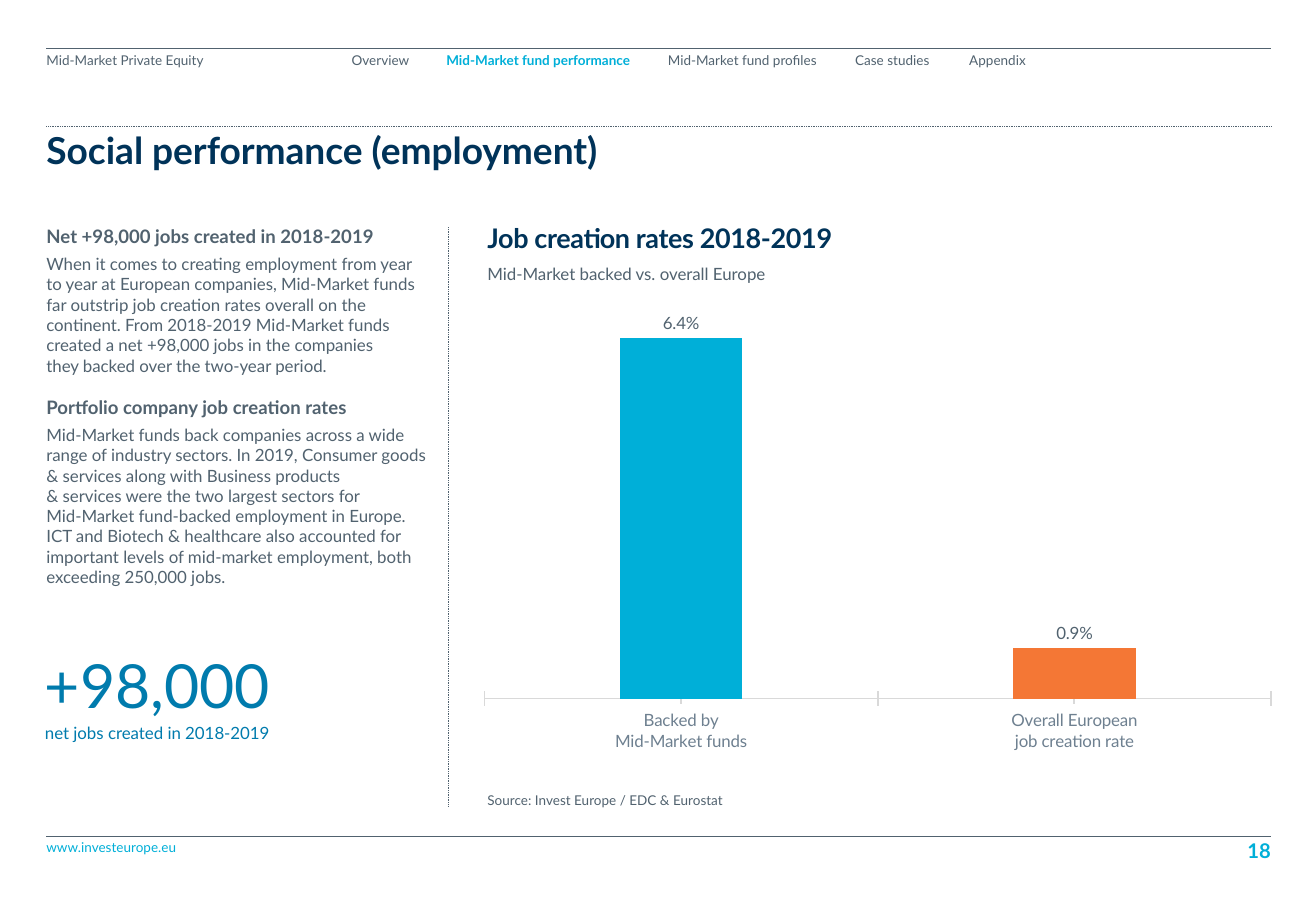
from dataclasses import dataclass

from lxml.etree import SubElement
from pptx import Presentation
from pptx.chart.data import CategoryChartData
from pptx.dml.color import RGBColor
from pptx.enum.chart import XL_CHART_TYPE as ChartType
from pptx.enum.chart import XL_LABEL_POSITION as LabelPosition
from pptx.enum.chart import XL_TICK_LABEL_POSITION as TickLabels
from pptx.enum.chart import XL_TICK_MARK as Tick
from pptx.enum.dml import MSO_LINE_DASH_STYLE as Dash
from pptx.enum.shapes import MSO_CONNECTOR as Connector
from pptx.enum.text import MSO_ANCHOR as Anchor
from pptx.enum.text import MSO_AUTO_SIZE as AutoSize
from pptx.enum.text import PP_ALIGN as Align
from pptx.oxml.ns import qn
from pptx.util import Cm, Pt


@dataclass(frozen=True)
class Theme:
    """Colours, type sizes and margins of the slide."""
    font: str = "Lato"
    slate: RGBColor = RGBColor.from_string("51626F")
    slate_light: RGBColor = RGBColor.from_string("6E8090")
    navy: RGBColor = RGBColor.from_string("003359")
    blue: RGBColor = RGBColor.from_string("007BAD")
    cyan: RGBColor = RGBColor.from_string("00AFD8")
    orange: RGBColor = RGBColor.from_string("F47735")
    axis_grey: RGBColor = RGBColor.from_string("D9D9D9")
    small: int = 8
    body: int = 10
    heading: int = 11
    page: int = 12
    chart_title: int = 16
    title: int = 22
    figure: int = 36
    left: float = 0.97
    right: float = 26.57
    chart_left: float = 10.19


THEME = Theme()


@dataclass(frozen=True)
class Style:
    """Look of one paragraph."""
    size: int
    color: RGBColor = THEME.slate
    bold: bool = False
    align: Align = Align.LEFT
    leading: float = 1.0
    before: float = 0
    after: float = 0
    tracking: int = 0


NAV = Style(THEME.small, align=Align.CENTER, leading=0.9)
NAV_ACTIVE = Style(THEME.small, THEME.cyan, True, Align.CENTER, 0.9)
SMALL = Style(THEME.small, leading=0.9)
BODY = Style(THEME.body, after=8)
FIRST_HEADING = Style(THEME.heading, bold=True, after=4)
NEXT_HEADING = Style(THEME.heading, bold=True, before=4, after=4)

NAVIGATION = [
    ("Mid-Market Private Equity", THEME.left, 4.8, SMALL),
    ("Overview", 7.14, 1.63, NAV),
    ("Mid-Market fund performance", 9.25, 4.01, NAV_ACTIVE),
    ("Mid-Market fund profiles", 13.87, 3.3, NAV),
    ("Case studies", 17.78, 1.75, NAV),
    ("Appendix", 20.17, 1.37, NAV),
]

STORY = [
    ("Net +98,000 jobs created in 2018-2019", FIRST_HEADING),
    ("When it comes to creating employment from year to year at European "
     "companies, Mid-Market funds far outstrip job creation rates overall on "
     "the continent. From 2018-2019 Mid-Market funds created a net +98,000 "
     "jobs in the companies\nthey backed over the two-year period.", BODY),
    ("Portfolio company job creation rates", NEXT_HEADING),
    ("Mid-Market funds back companies across a wide range of industry "
     "sectors. In 2019, Consumer goods & services along with Business "
     "products\n& services were the two largest sectors for\nMid-Market "
     "fund-backed employment in Europe. ICT and Biotech & healthcare also "
     "accounted for important levels of mid-market employment, both "
     "exceeding 250,000 jobs.", BODY),
]

JOB_RATES = [
    ("Backed by\nMid-Market funds", 0.064, THEME.cyan),
    ("Overall European\njob creation rate", 0.009, THEME.orange),
]


def style_font(font, size, color, bold=False):
    """Apply the theme font with a size and colour."""
    font.name = THEME.font
    font.size = Pt(size)
    font.bold = bold
    font.color.rgb = color


def fill_frame(frame, paragraphs, inset_top=0.0, inset_bottom=0.0):
    """Write styled paragraphs into a text frame, run by run."""
    frame.word_wrap = True
    frame.auto_size = AutoSize.NONE
    frame.margin_left = frame.margin_right = 0
    frame.margin_top, frame.margin_bottom = Cm(inset_top), Cm(inset_bottom)
    for index, (text, style) in enumerate(paragraphs):
        paragraph = frame.add_paragraph() if index else frame.paragraphs[0]
        paragraph.alignment = style.align
        paragraph.line_spacing = style.leading
        paragraph.space_before = Pt(style.before)
        paragraph.space_after = Pt(style.after)
        for line_number, line in enumerate(text.split("\n")):
            if line_number:
                paragraph.add_line_break()
            run = paragraph.add_run()
            run.text = line
            style_font(run.font, style.size, style.color, style.bold)
            if style.tracking:
                run.font._element.set("spc", str(style.tracking))


def add_text(slide, box, paragraphs, inset_top=0.0):
    """Place a text box given as left, top, width and height in cm."""
    textbox = slide.shapes.add_textbox(*map(Cm, box))
    fill_frame(textbox.text_frame, paragraphs, inset_top)


def add_rule(slide, start, end, dotted=False):
    """Draw a thin slate line between two points in cm."""
    rule = slide.shapes.add_connector(Connector.STRAIGHT, *map(Cm, start + end))
    rule.line.color.rgb = THEME.slate
    rule.line.width = Pt(0.5)
    if dotted:
        rule.line.dash_style = Dash.ROUND_DOT
    SubElement(rule._element.spPr, qn("a:effectLst"))


def set_title(slide, text):
    """Move the title placeholder and write the slide title."""
    title = slide.shapes.title
    title.left, title.top = Cm(THEME.left), Cm(2.67)
    title.width, title.height = Cm(THEME.right - THEME.left), Cm(1.04)
    title.text_frame.vertical_anchor = Anchor.MIDDLE
    style = Style(THEME.title, THEME.navy, True, leading=0.9)
    fill_frame(title.text_frame, [(text, style)], 0.1, 0.1)


def set_plot_area(chart, x, y, w, h):
    """Fix the inner plot area as fractions of the chart."""
    plot_area = chart._chartSpace.chart.plotArea
    layout = plot_area.find(qn("c:layout"))
    if layout is None:
        layout = SubElement(plot_area, qn("c:layout"))
        plot_area.insert(0, layout)
    manual = SubElement(layout, qn("c:manualLayout"))
    settings = {"layoutTarget": "inner", "xMode": "edge", "yMode": "edge",
                "x": x, "y": y, "w": w, "h": h}
    for tag, value in settings.items():
        SubElement(manual, qn(f"c:{tag}")).set("val", str(value))


def add_rate_chart(slide, box):
    """Add the column chart of job creation rates."""
    data = CategoryChartData(number_format="0.0%")
    data.categories = [category for category, _, _ in JOB_RATES]
    data.add_series("Series 1", [rate for _, rate, _ in JOB_RATES])
    chart = slide.shapes.add_chart(
        ChartType.COLUMN_CLUSTERED, *map(Cm, box), data).chart
    chart.has_title = chart.has_legend = False
    style_font(chart.font, THEME.body, THEME.slate)
    set_plot_area(chart, 0.023, 0.037, 0.955, 0.793)

    rates = chart.value_axis
    rates.minimum_scale, rates.maximum_scale = 0, 0.07
    rates.has_major_gridlines = False
    rates.visible = False

    groups = chart.category_axis
    groups.major_tick_mark, groups.minor_tick_mark = Tick.CROSS, Tick.OUTSIDE
    groups.tick_label_position = TickLabels.LOW
    groups.format.line.color.rgb = THEME.axis_grey
    groups.format.line.width = Pt(1)
    style_font(groups.tick_labels.font, THEME.body, THEME.slate_light)

    plot = chart.plots[0]
    plot.vary_by_categories = False
    plot.gap_width, plot.overlap = 220, -27
    plot.has_data_labels = True
    labels = plot.data_labels
    labels.show_value = True
    labels.position = LabelPosition.OUTSIDE_END
    labels.number_format, labels.number_format_is_linked = "0.0%", False
    style_font(labels.font, THEME.body, THEME.slate)
    for index, (_, _, color) in enumerate(JOB_RATES):
        fill = plot.series[0].points[index].format.fill
        fill.solid()
        fill.fore_color.rgb = color


def main():
    """Build the slide and save it."""
    deck = Presentation()
    deck.slide_width, deck.slide_height = Cm(27.51), Cm(19.05)
    slide = deck.slides.add_slide(deck.slide_layouts[5])
    set_title(slide, "Social performance (employment)")

    for height, dotted in [(1.02, False), (2.64, True), (17.5, False)]:
        add_rule(slide, (THEME.left, height), (THEME.right, height), dotted)
    add_rule(slide, (9.37, 4.75), (9.37, 16.87), dotted=True)

    for label, left, width, style in NAVIGATION:
        add_text(slide, (left, 1.02, width, 0.41), [(label, style)], 0.1)

    add_text(slide, (THEME.left, 4.7, 8, 8), STORY)
    add_text(slide, (0.94, 13.54, 6, 1.55),
             [("+98,000", Style(THEME.figure, THEME.blue))])
    add_text(slide, (0.94, 15.11, 6, 0.43),
             [("net jobs created in 2018-2019", Style(THEME.body, THEME.blue))])

    add_text(slide, (THEME.chart_left, 4.72, 14.15, 0.61),
             [("Job creation rates 2018-2019",
               Style(THEME.chart_title, THEME.navy, True, leading=0.9, tracking=-20))])
    add_text(slide, (THEME.chart_left, 5.51, 16, 0.76),
             [("Mid-Market backed vs. overall Europe", Style(THEME.body))])
    add_rate_chart(slide, (9.73, 5.97, 17.22, 10.41))
    add_text(slide, (THEME.chart_left, 16.61, 13.89, 0.46),
             [("Source: Invest Europe / EDC & Eurostat", SMALL)])

    add_text(slide, (THEME.left, 17.55, 9.3, 0.34),
             [("www.investeurope.eu", Style(THEME.small, THEME.cyan))])
    add_text(slide, (20.37, 17.53, 6.2, 0.51),
             [("18", Style(THEME.page, THEME.cyan, True, Align.RIGHT))])
    deck.save("out.pptx")


if __name__ == "__main__":
    main()
